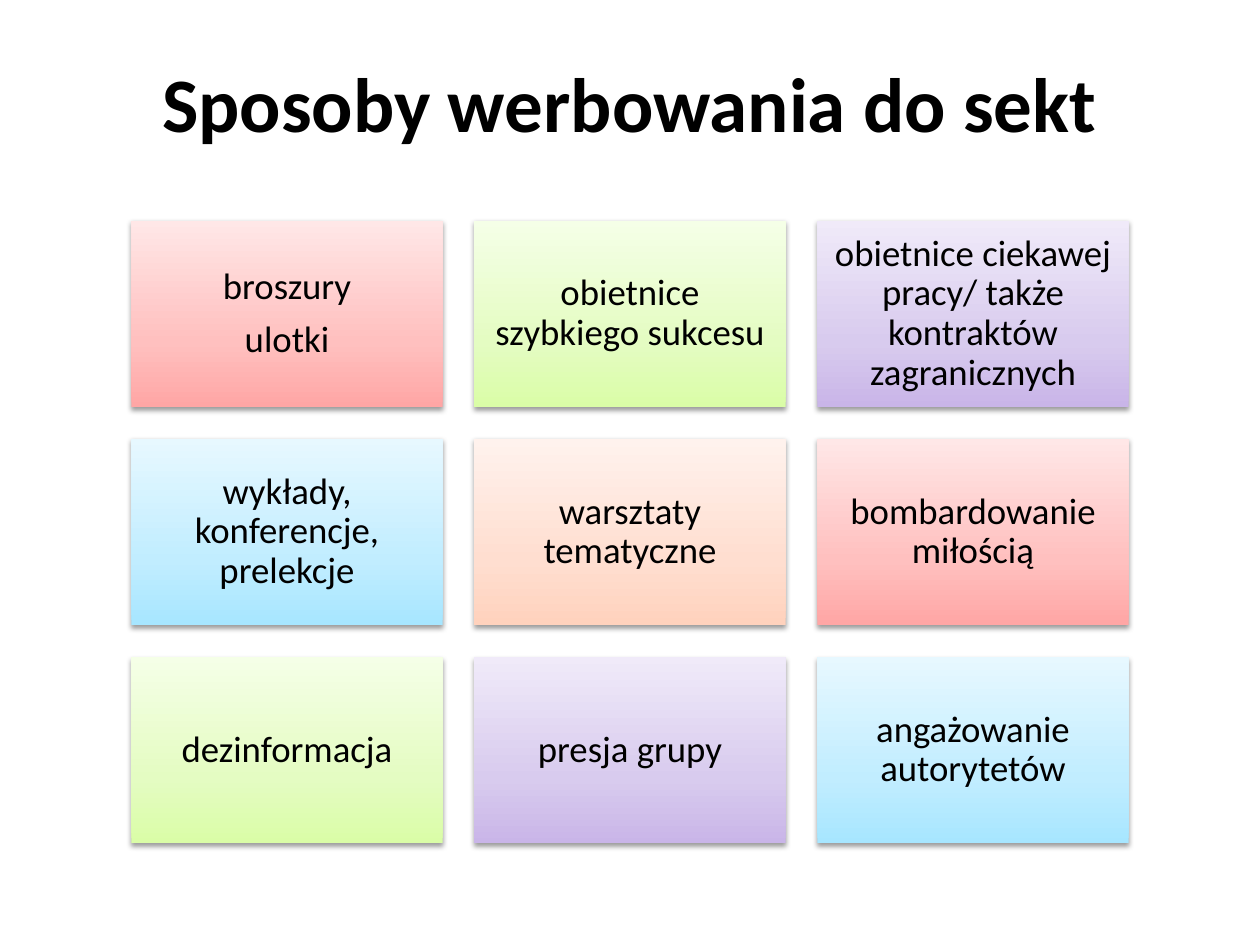
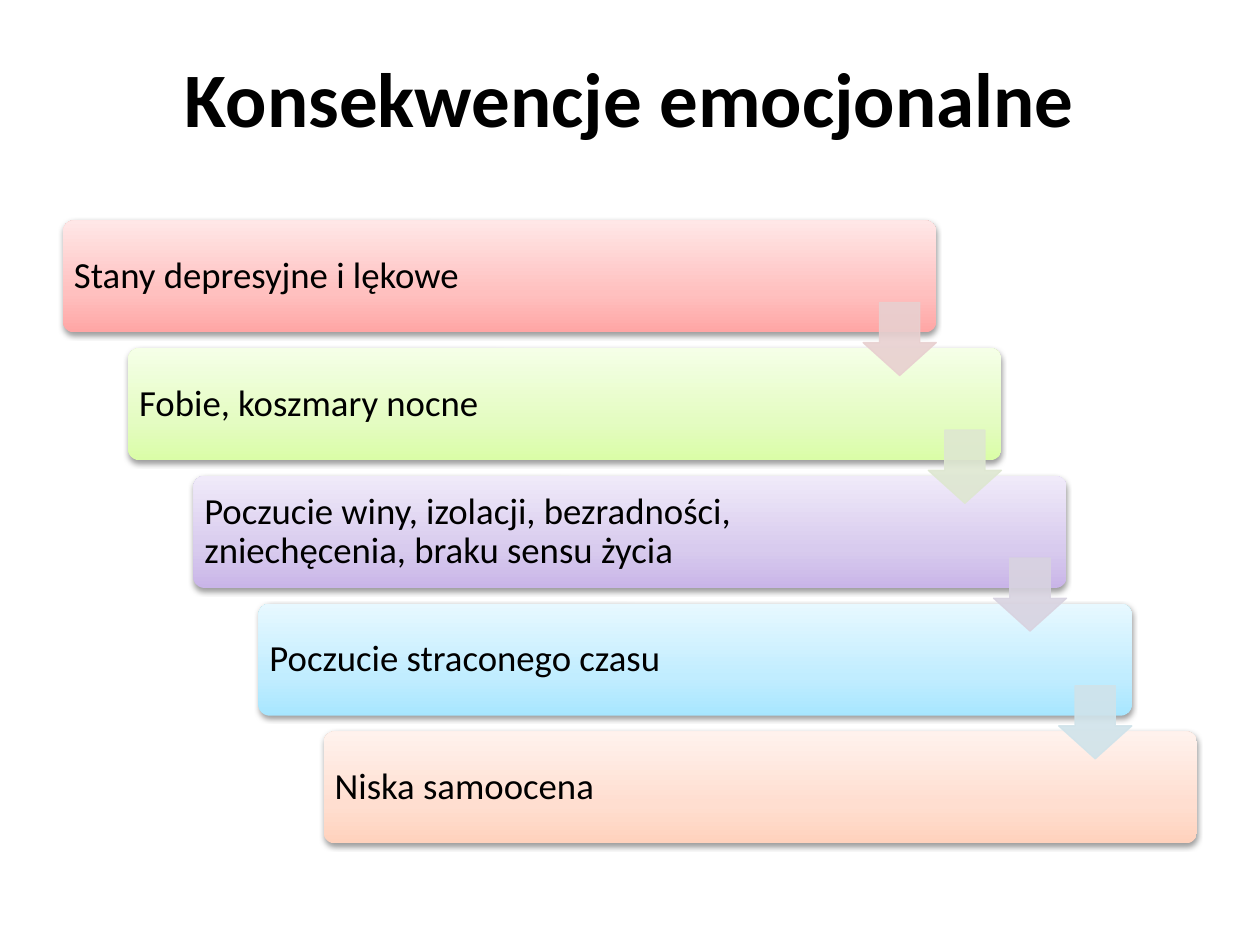
from collections import namedtuple

from lxml import etree
from pptx import Presentation
from pptx.dml.color import RGBColor
from pptx.enum import shapes, text
from pptx.oxml import ns
from pptx.util import Pt

Box = namedtuple("Box", "left top width height")
Tint = namedtuple("Tint", "deep middle pale arrow")

FONT = "Calibri"
BLACK = RGBColor(0x00, 0x00, 0x00)
RED = Tint(RGBColor(0xFF, 0xA6, 0xA5), RGBColor(0xFF, 0xC0, 0xBF),
           RGBColor(0xFF, 0xE7, 0xE7), RGBColor(0xE8, 0xD0, 0xD0))
GREEN = Tint(RGBColor(0xDA, 0xFD, 0xA7), RGBColor(0xE4, 0xFC, 0xC2),
             RGBColor(0xF5, 0xFF, 0xE7), RGBColor(0xDE, 0xE7, 0xD1))
PURPLE = Tint(RGBColor(0xC9, 0xB5, 0xE8), RGBColor(0xD8, 0xCB, 0xEE),
              RGBColor(0xF0, 0xEA, 0xF9), RGBColor(0xD8, 0xD3, 0xE0))
BLUE = Tint(RGBColor(0xA7, 0xE6, 0xFF), RGBColor(0xC1, 0xED, 0xFF),
            RGBColor(0xE7, 0xF8, 0xFF), RGBColor(0xD0, 0xE3, 0xEA))
ORANGE = Tint(RGBColor(0xFF, 0xD2, 0xBD), RGBColor(0xFF, 0xDE, 0xD0),
              RGBColor(0xFF, 0xF2, 0xED), None)
TINTS = [RED, GREEN, PURPLE, BLUE, ORANGE]

METHODS = [
    ["broszury", "ulotki"],
    ["obietnice szybkiego sukcesu"],
    ["obietnice ciekawej pracy/ także kontraktów zagranicznych"],
    ["wykłady, konferencje, prelekcje"],
    ["warsztaty tematyczne"],
    ["bombardowanie miłością"],
    ["dezinformacja"],
    ["presja grupy"],
    ["angażowanie autorytetów"],
]
CONSEQUENCES = [
    "Stany depresyjne i lękowe",
    "Fobie, koszmary nocne",
    "Poczucie winy, izolacji, bezradności, zniechęcenia, braku sensu życia",
    "Poczucie straconego czasu",
    "Niska samoocena",
]


def add_node(parent, tag, **attributes):
    """Append a DrawingML element and return it."""
    node = etree.SubElement(parent, ns.qn(tag))
    for name, value in attributes.items():
        node.set(name, str(value))
    return node


def fill_gradient(shape, tint):
    """Fill a shape from its deep colour at the bottom to the pale one at the top."""
    shape.fill.gradient()
    gradient = shape.element.spPr.find(ns.qn("a:gradFill"))
    for child in list(gradient):
        gradient.remove(child)
    stops = add_node(gradient, "a:gsLst")
    for percent, colour in zip((0, 35, 100), tint[:3]):
        stop = add_node(stops, "a:gs", pos=percent * 1000)
        add_node(stop, "a:srgbClr", val=colour)
    add_node(gradient, "a:lin", ang=270 * 60000, scaled=0)


def drop_shadow(shape):
    """Give a shape a soft shadow straight below it."""
    shape.shadow.inherit = False
    effects = shape.element.spPr.find(ns.qn("a:effectLst"))
    shadow = add_node(effects, "a:outerShdw", blurRad=Pt(3.1), dist=Pt(1.6),
                      dir=90 * 60000, rotWithShape=0)
    colour = add_node(shadow, "a:srgbClr", val=BLACK)
    add_node(colour, "a:alpha", val=38000)


def add_preset(page, kind, box, adjustments=()):
    """Place a preset shape in a box given in points."""
    shape = page.shapes.add_shape(kind, *(Pt(length) for length in box))
    for index, value in enumerate(adjustments):
        shape.adjustments[index] = value
    return shape


def add_card(page, box, lines, tint, kind, alignment, adjustments=(), left=6.3, right=6.3):
    """Draw a shaded card with its lines of text."""
    card = add_preset(page, kind, box, adjustments)
    fill_gradient(card, tint)
    card.line.fill.background()
    drop_shadow(card)
    frame = card.text_frame
    frame.word_wrap = True
    frame.vertical_anchor = text.MSO_ANCHOR.MIDDLE
    frame.margin_left, frame.margin_right = Pt(left), Pt(right)
    frame.margin_top = frame.margin_bottom = Pt(6.3)
    for index, line in enumerate(lines):
        para = frame.add_paragraph() if index else frame.paragraphs[0]
        para.alignment = alignment
        para.line_spacing = 0.9
        para.space_after = Pt(7.35)
        add_span(para, line, 21)


def add_span(para, words, size, bold=False):
    """Add one formatted run to a paragraph."""
    span = para.add_run()
    span.text = words
    span.font.name = FONT
    span.font.size = Pt(size)
    span.font.bold = bold
    span.font.color.rgb = BLACK


def add_page(deck, heading, title_height):
    """Add a slide with a bold centred title."""
    page = deck.slides.add_slide(deck.slide_layouts[5])
    title = page.shapes.title
    title.left, title.top = Pt(36), Pt(21.6)
    title.width, title.height = Pt(648), Pt(title_height)
    title.text_frame.vertical_anchor = text.MSO_ANCHOR.MIDDLE
    para = title.text_frame.paragraphs[0]
    para.alignment = text.PP_ALIGN.CENTER
    add_span(para, heading, 44, bold=True)
    return page


def add_method_grid(page, box, columns=3, gap=18):
    """Lay the recruiting methods out in an even grid."""
    rows = len(METHODS) // columns
    width = (box.width - gap * (columns - 1)) / columns
    height = (box.height - gap * (rows - 1)) / rows
    for index, lines in enumerate(METHODS):
        row, column = divmod(index, columns)
        cell = Box(box.left + column * (width + gap), box.top + row * (height + gap),
                   width, height)
        add_card(page, cell, lines, TINTS[index % len(TINTS)],
                 shapes.MSO_SHAPE.RECTANGLE, text.PP_ALIGN.CENTER)


def add_step_arrow(page, box, colour):
    """Draw a slightly transparent arrow pointing down."""
    arrow = add_preset(page, shapes.MSO_SHAPE.DOWN_ARROW, box, (0.55, 0.45))
    arrow.shadow.inherit = False
    arrow.fill.solid()
    arrow.fill.fore_color.rgb = colour
    arrow.line.color.rgb = colour
    arrow.line.width = Pt(0.75)
    for node in list(arrow.element.spPr.iter(ns.qn("a:srgbClr"))):
        add_node(node, "a:alpha", val=90000)


def add_consequence_stairs(page, box, width=499, height=64, arrow_size=41.8):
    """Step the consequences down to the right, with arrows between them."""
    last = len(CONSEQUENCES) - 1
    across, down = (box.width - width) / last, (box.height - height) / last
    steps = [Box(box.left + index * across, box.top + index * down, width, height)
             for index in range(last + 1)]
    for step, line, tint in zip(steps, CONSEQUENCES, TINTS):
        add_card(page, step, [line], tint, shapes.MSO_SHAPE.ROUNDED_RECTANGLE,
                 text.PP_ALIGN.LEFT, (0.1,), left=4.4, right=83)
    for step, tint in zip(steps[:-1], TINTS):
        add_step_arrow(page, Box(step.left + width - arrow_size, step.top + 46.8,
                                 arrow_size, arrow_size), tint.arrow)


def main():
    """Build and save the deck."""
    deck = Presentation()
    deck.slide_width, deck.slide_height = Pt(720), Pt(540)
    methods = add_page(deck, "Sposoby werbowania do sekt", 72.7)
    add_method_grid(methods, Box(75, 126, 570, 356))
    consequences = add_page(deck, "Konsekwencje emocjonalne", 67)
    add_consequence_stairs(consequences, Box(36, 126, 648, 356))
    deck.save("out.pptx")


if __name__ == "__main__":
    main()
